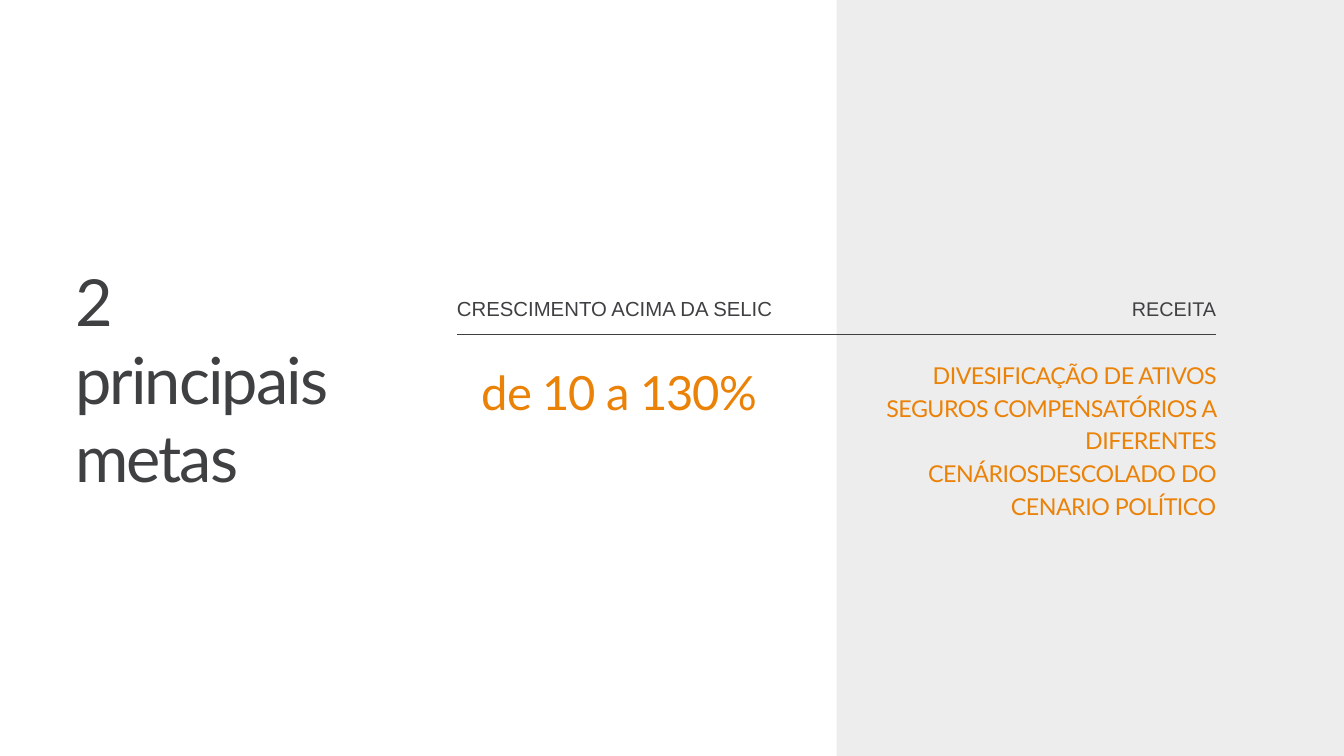
from pptx import Presentation
from pptx.dml.color import RGBColor
from pptx.enum.shapes import MSO_CONNECTOR, MSO_SHAPE
from pptx.enum.text import PP_ALIGN
from pptx.oxml.ns import qn
from pptx.util import Inches, Pt
from lxml.etree import SubElement

WHITE = RGBColor(0xFF, 0xFF, 0xFF)
GREY = RGBColor(0xED, 0xED, 0xED)
DARK = RGBColor(0x3F, 0x40, 0x42)
ORANGE = RGBColor(0xEB, 0x82, 0x08)
COLS, ROWS = 20, 11.25
LEFT, RIGHT = 6.8, 18.1
WIDE = 5.03
EDGE = RIGHT - WIDE

FORMATS = {
    "title": {"size": Pt(69.5), "name": "Lato", "color": DARK, "lead": 83.4, "track": -210},
    "value": {"size": Pt(50.5), "name": "Lato", "color": ORANGE, "lead": 70.7, "track": -100},
    "body": {"size": Pt(24.9), "name": "Lato", "color": ORANGE, "lead": 34.9, "track": -50},
    "head": {"size": Pt(21.8), "name": "Arial", "color": DARK, "lead": 30.5, "track": 0},
    "label": {"size": Pt(21.2), "name": "Arial", "color": DARK, "lead": 29.8, "track": 0},
}


class Deck:
    def __init__(self):
        self.show = Presentation()
        self.show.slide_width = Inches(COLS)
        self.show.slide_height = Inches(ROWS)
        self.slide = self.show.slides.add_slide(self.show.slide_layouts[6])
        fill = self.slide.background.fill
        fill.solid()
        fill.fore_color.rgb = WHITE

    def grid(self, col, row, wide, high):
        across, down = self.show.slide_width / COLS, self.show.slide_height / ROWS
        return [int(n) for n in (col * across, row * down, wide * across, high * down)]

    def panel(self, area, color):
        shape = self.slide.shapes.add_shape(MSO_SHAPE.RECTANGLE, *self.grid(*area))
        shape.shadow.inherit = False
        shape.fill.solid()
        shape.fill.fore_color.rgb = color
        shape.line.fill.background()

    def rule(self, start, end, row, color):
        x, y, wide, _ = self.grid(start, row, end - start, 0)
        line = self.slide.shapes.add_connector(MSO_CONNECTOR.STRAIGHT, x, y, x + wide, y)
        line.line.color.rgb = color
        line.line.width = Pt(0.75)
        SubElement(line._element.spPr, qn("a:effectLst"))

    def text(self, area, lines, style, align=PP_ALIGN.LEFT):
        frame = self.slide.shapes.add_textbox(*self.grid(*area)).text_frame
        frame.word_wrap = True
        for side in ("left", "right", "top", "bottom"):
            setattr(frame, f"margin_{side}", 0)
        look = FORMATS[style]
        for i, line in enumerate(lines):
            para = frame.add_paragraph() if i else frame.paragraphs[0]
            para.alignment = align
            para.line_spacing = Pt(look["lead"])
            run = para.add_run()
            run.text = line
            for key in ("size", "name"):
                setattr(run.font, key, look[key])
            run.font.color.rgb = look["color"]
            run._r.get_or_add_rPr().set("spc", str(look["track"]))

    def save(self):
        self.show.save("out.pptx")


def main():
    deck = Deck()
    deck.panel((12.45, 0, COLS - 12.45, ROWS), GREY)
    deck.rule(LEFT, RIGHT, 4.98, DARK)
    deck.text((1.12, 3.9, 3.97, 3.47), ["2 principais", "metas"], "title")
    deck.text((7.17, 5.26, 4.29, 0.95), ["de 10 a 130%"], "value")
    deck.text(
        (EDGE, 5.31, WIDE, 2.39),
        ["DIVESIFICAÇÃO DE ATIVOS SEGUROS COMPENSATÓRIOS A DIFERENTES "
         "CENÁRIOSDESCOLADO DO CENARIO POLÍTICO"],
        "body", PP_ALIGN.RIGHT)
    deck.text((LEFT, 4.34, WIDE, 0.4), ["CRESCIMENTO ACIMA DA SELIC"], "head")
    deck.text((EDGE, 4.36, WIDE, 0.38), ["RECEITA"], "label", PP_ALIGN.RIGHT)
    deck.save()


if __name__ == "__main__":
    main()
